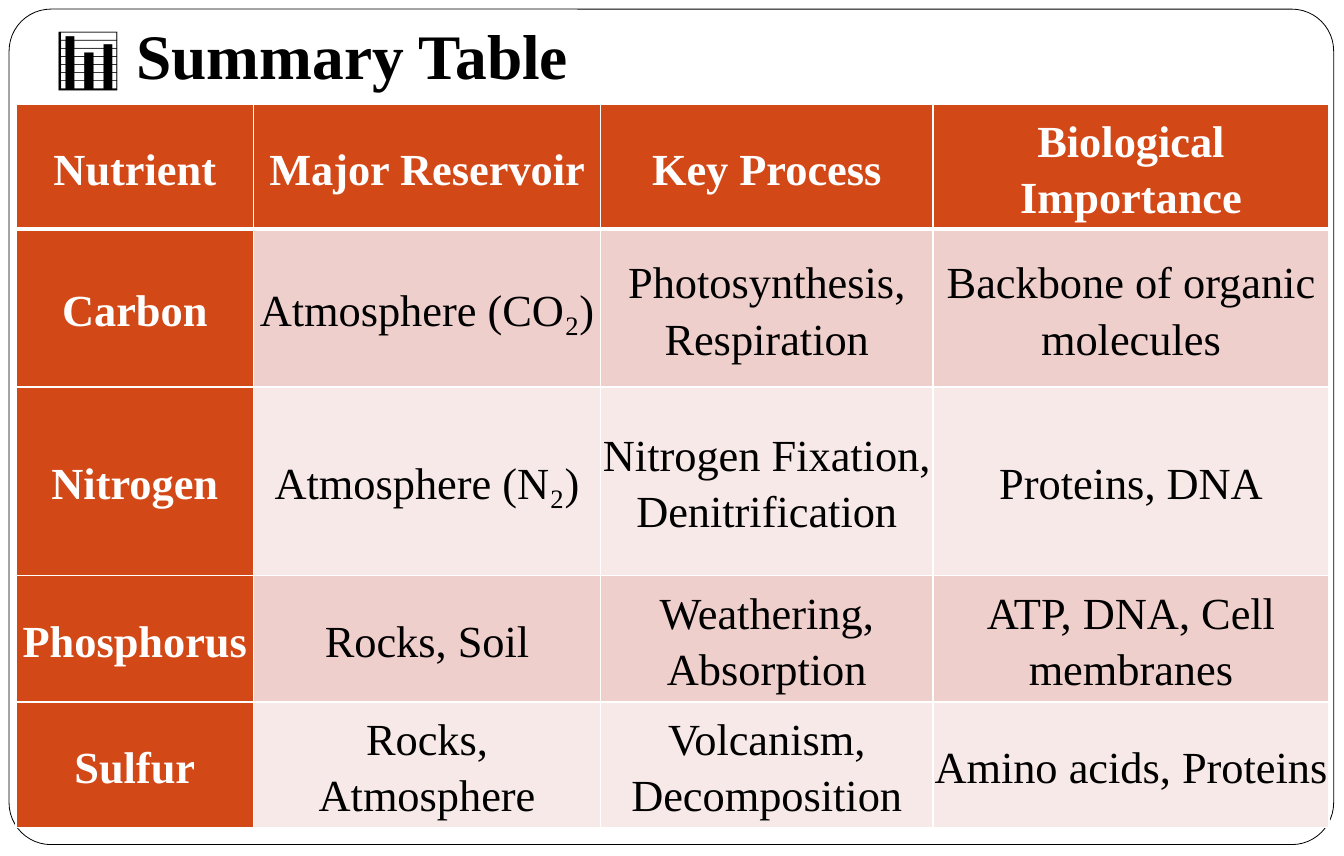
from collections import namedtuple

from lxml import etree
from pptx import Presentation, util as u
from pptx.dml.color import RGBColor
from pptx.enum import shapes, text
from pptx.oxml import ns

PX = 9144  # 100 px to the inch
FONT = "Times New Roman"
BLACK = RGBColor(0x00, 0x00, 0x00)
WHITE = RGBColor(0xFF, 0xFF, 0xFF)
ORANGE = RGBColor(0xD3, 0x48, 0x17)
BANDS = (RGBColor(0xEF, 0xCF, 0xCC), RGBColor(0xF7, 0xE9, 0xE8))

Box = namedtuple("Box", "left top width height")
PAGE = Box(0, 0, 1177, 750)
FRAME = Box(8, 8, 1160, 732)
TITLE = Box(40, 8, 1060, 83)
TABLE = Box(14, 91, 1150, 634)

COLUMN_WIDTHS = (208, 304, 291, 347)
ROW_HEIGHTS = (110, 138, 165, 111, 110)
ROWS = (
    ("Nutrient", "Major Reservoir", "Key Process", "Biological Importance"),
    ("Carbon", "Atmosphere (CO₂)", "Photosynthesis, Respiration", "Backbone of organic molecules"),
    ("Nitrogen", "Atmosphere (N₂)", "Nitrogen Fixation, Denitrification", "Proteins, DNA"),
    ("Phosphorus", "Rocks, Soil", "Weathering, Absorption", "ATP, DNA, Cell membranes"),
    ("Sulfur", "Rocks, Atmosphere", "Volcanism, Decomposition", "Amino acids, Proteins"),
)


def emu(box):
    return [length * PX for length in box]


def style_text(para, size, color, bold):
    for span in para.runs:
        span.font.name = FONT
        span.font.size = u.Pt(size)
        span.font.bold = bold
        span.font.color.rgb = color


def add_frame(slide, box):
    frame = slide.shapes.add_shape(shapes.MSO_SHAPE.ROUNDED_RECTANGLE, *emu(box))
    frame.adjustments[0] = 0.05
    frame.shadow.inherit = False
    frame.fill.solid()
    frame.fill.fore_color.rgb = WHITE
    frame.line.color.rgb = BLACK
    frame.line.width = u.Pt(0.5)


def add_title(slide, box):
    frame = slide.shapes.add_textbox(*emu(box)).text_frame
    frame.word_wrap = True
    frame.vertical_anchor = text.MSO_ANCHOR.BOTTOM
    frame.margin_left = frame.margin_right = frame.margin_bottom = 10 * PX
    frame.margin_top = 5 * PX
    frame.text = "📊 Summary Table"
    style_text(frame.paragraphs[0], 40, BLACK, True)


def add_borders(cell, bottom_width):
    properties = cell._tc.get_or_add_tcPr()
    widths = {"a:lnL": 1, "a:lnR": 1, "a:lnT": 1, "a:lnB": bottom_width}
    for position, (side, width) in enumerate(widths.items()):
        line = etree.Element(ns.qn(side), w=str(u.Pt(width)))
        fill = etree.SubElement(line, ns.qn("a:solidFill"))
        etree.SubElement(fill, ns.qn("a:srgbClr"), val=str(WHITE))
        properties.insert(position, line)


def fill_cell(cell, content, fill, color, bold):
    cell.fill.solid()
    cell.fill.fore_color.rgb = fill
    cell.vertical_anchor = text.MSO_ANCHOR.MIDDLE
    cell.margin_left = cell.margin_right = cell.margin_top = cell.margin_bottom = 0
    cell.text = content
    para = cell.text_frame.paragraphs[0]
    para.alignment = text.PP_ALIGN.CENTER
    para.line_spacing = 1.15
    para.space_after = u.Pt(8)
    style_text(para, 28, color, bold)


def add_nutrient_table(slide, box):
    table = slide.shapes.add_table(len(ROWS), len(COLUMN_WIDTHS), *emu(box)).table
    table.first_col = True
    for column, width in zip(table.columns, COLUMN_WIDTHS):
        column.width = width * PX
    for i, (row, height, contents) in enumerate(zip(table.rows, ROW_HEIGHTS, ROWS)):
        row.height = height * PX
        for j, (cell, content) in enumerate(zip(row.cells, contents)):
            if i == 0 or j == 0:
                fill_cell(cell, content, ORANGE, WHITE, True)
            else:
                fill_cell(cell, content, BANDS[(i - 1) % 2], BLACK, False)
            add_borders(cell, 3 if i == 0 else 1)


def main():
    deck = Presentation()
    deck.slide_width, deck.slide_height = PAGE.width * PX, PAGE.height * PX
    slide = deck.slides.add_slide(deck.slide_layouts[6])
    add_frame(slide, FRAME)
    add_title(slide, TITLE)
    add_nutrient_table(slide, TABLE)
    deck.save("out.pptx")


if __name__ == "__main__":
    main()
